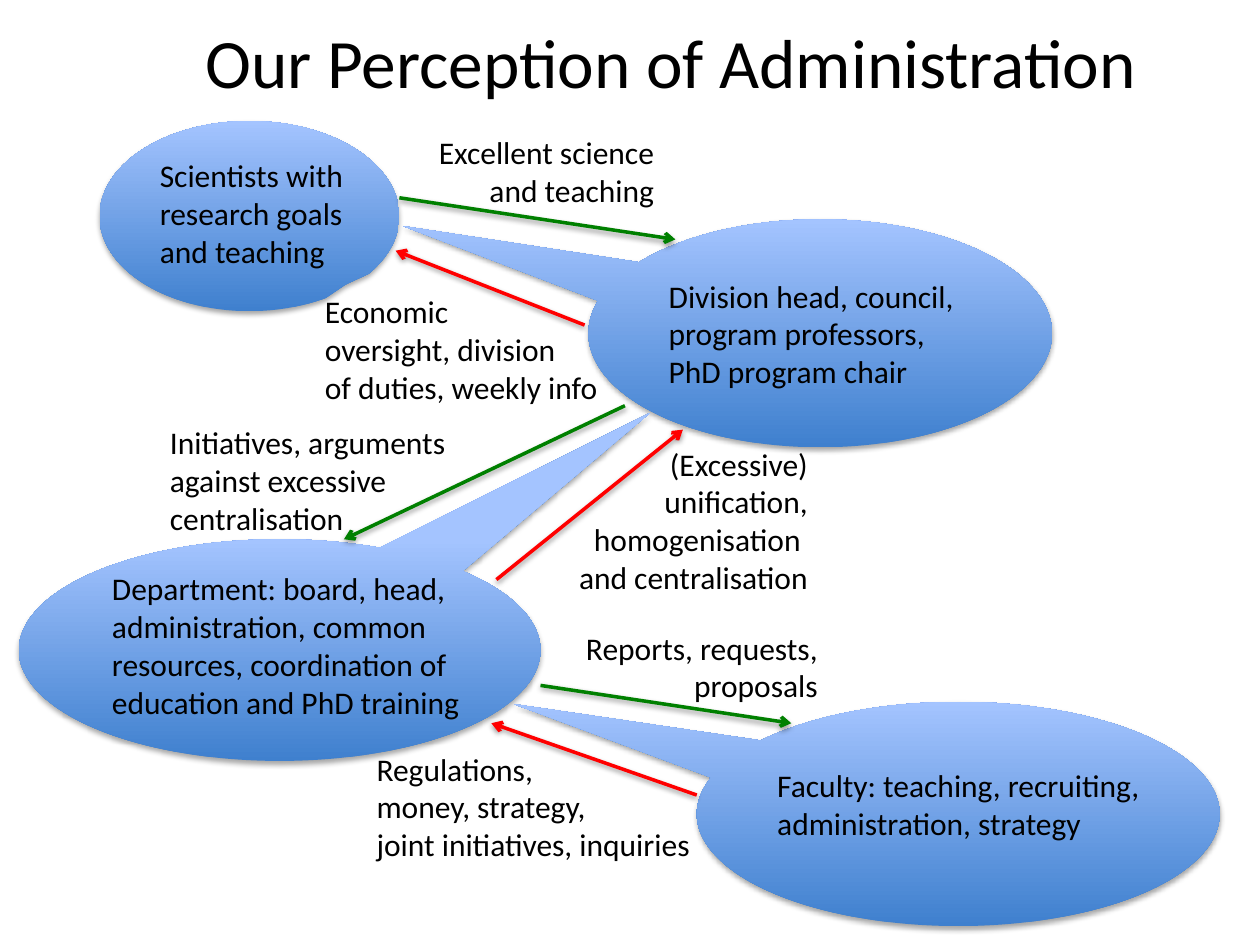
from dataclasses import dataclass

import lxml.etree
import pptx
import pptx.dml.color
import pptx.enum.dml
import pptx.enum.shapes
import pptx.enum.text
import pptx.oxml.ns
import pptx.presentation
import pptx.slide
import pptx.util

COLUMNS, ROWS = 100, 75
LEFT = pptx.enum.text.PP_ALIGN.LEFT
CENTER = pptx.enum.text.PP_ALIGN.CENTER
RIGHT = pptx.enum.text.PP_ALIGN.RIGHT


@dataclass(frozen=True)
class Theme:
    font: str = "Calibri"
    title_size: float = 39.6
    body_size: float = 18
    text: str = "000000"
    callout_bottom: str = "3F80CE"
    callout_top: str = "A4C4FF"
    upward: str = "008000"
    downward: str = "FF0000"
    arrow_width: float = 2
    shadow_blur: float = 3.1
    callout_shadow: tuple[float, int] = (1.8, 35)
    arrow_shadow: tuple[float, int] = (1.6, 38)


@dataclass(frozen=True)
class Box:
    column: float
    row: float
    columns: float
    rows: float


@dataclass(frozen=True)
class Callout:
    box: Box
    pointer: tuple[float, float]
    text: str = ""


@dataclass(frozen=True)
class Label:
    box: Box
    text: str
    align: pptx.enum.text.PP_ALIGN = LEFT
    wrap: bool = False


@dataclass(frozen=True)
class Arrow:
    start: tuple[float, float]
    end: tuple[float, float]
    color: str


THEME = Theme()

TITLE = Label(Box(12.6, 1, 81.3, 7.6), "Our Perception of Administration", CENTER, True)

CALLOUTS = [
    Callout(Box(7.9, 9.6, 23.8, 15.1), (0.32, 0.36)),
    Callout(Box(46.7, 17.4, 36.8, 18.1), (-0.9, -0.47),
            "Division head, council, program professors, PhD program chair"),
    Callout(Box(1.5, 42.8, 41.4, 17.6), (0.71, -1.07)),
    Callout(Box(55.3, 55.7, 41.5, 17.8), (-0.85, -0.49)),
]

ARROWS = [
    Arrow((31.7, 15.7), (53.6, 19), THEME.upward),
    Arrow((46.4, 25.8), (31.4, 19.9), THEME.downward),
    Arrow((49.6, 32.2), (27.3, 42.8), THEME.upward),
    Arrow((39.4, 46), (54.2, 34.1), THEME.downward),
    Arrow((42.9, 54.4), (62.8, 57.4), THEME.upward),
    Arrow((55.3, 63.1), (39, 57.4), THEME.downward),
]

LABELS = [
    Label(Box(11.7, 11.9, 16.7, 13.1), "Scientists with\nresearch goals\nand teaching"),
    Label(Box(7.9, 44.7, 31.1, 13.1),
          "Department: board, head, administration, common resources, "
          "coordination of education and PhD training", wrap=True),
    Label(Box(60.7, 60.3, 31.1, 10.1), "Faculty: teaching, recruiting,\nadministration, strategy"),
    Label(Box(32.4, 10.1, 20.5, 7.1), "Excellent science\vand teaching", RIGHT, True),
    Label(Box(24.8, 22.7, 28.8, 10.1),
          "Economic\voversight, division\vof duties, weekly info", wrap=True),
    Label(Box(12.5, 33.1, 24.2, 10.1),
          "Initiatives, arguments\vagainst excessive\vcentralisation"),
    Label(Box(44, 34.8, 21.1, 16.2),
          "(Excessive)\vunification,\vhomogenisation \nand centralisation", RIGHT),
    Label(Box(45.2, 49.4, 20.7, 7.1), "Reports, requests,\vproposals", RIGHT),
    Label(Box(28.9, 59, 27.8, 10.1),
          "Regulations,\vmoney, strategy,\vjoint initiatives, inquiries"),
]


def rgb(color: str) -> pptx.dml.color.RGBColor:
    return pptx.dml.color.RGBColor.from_string(color)


def across(columns: float) -> int:
    return pptx.util.Inches(10 * columns / COLUMNS)


def down(rows: float) -> int:
    return pptx.util.Inches(7.5 * rows / ROWS)


def place(box: Box) -> tuple[int, int, int, int]:
    return across(box.column), down(box.row), across(box.columns), down(box.rows)


def add_element(parent, tag: str, **attributes):
    return lxml.etree.SubElement(parent, pptx.oxml.ns.qn(tag), attributes)


def add_shadow(shape, distance: float, opacity: int) -> None:
    effects = add_element(shape._element.spPr, "a:effectLst")
    shadow = add_element(
        effects, "a:outerShdw", blurRad=str(pptx.util.Pt(THEME.shadow_blur)),
        dist=str(pptx.util.Pt(distance)), dir="5400000", rotWithShape="0")
    color = add_element(shadow, "a:srgbClr", val="000000")
    add_element(color, "a:alpha", val=str(opacity * 1000))


def write(frame, text: str, align: pptx.enum.text.PP_ALIGN, size: float) -> None:
    frame.text = text
    for paragraph in frame.paragraphs:
        paragraph.alignment = align
        paragraph.font.name = THEME.font
        paragraph.font.size = pptx.util.Pt(size)
        paragraph.font.color.rgb = rgb(THEME.text)


def draw_label(slide: pptx.slide.Slide, label: Label, size: float,
               anchor: pptx.enum.text.MSO_ANCHOR) -> None:
    frame = slide.shapes.add_textbox(*place(label.box)).text_frame
    frame.word_wrap = label.wrap
    frame.vertical_anchor = anchor
    write(frame, label.text, label.align, size)


def draw_callout(slide: pptx.slide.Slide, callout: Callout) -> None:
    shape = slide.shapes.add_shape(
        pptx.enum.shapes.MSO_SHAPE.OVAL_CALLOUT, *place(callout.box))
    shape.adjustments[0], shape.adjustments[1] = callout.pointer
    shape.fill.gradient()
    shape.fill.gradient_angle = 90
    colors = (THEME.callout_bottom, THEME.callout_top)
    for position, (stop, color) in enumerate(zip(shape.fill.gradient_stops, colors)):
        stop.position = position
        stop.color.rgb = rgb(color)
    shape.line.fill.background()
    add_shadow(shape, *THEME.callout_shadow)
    if callout.text:
        shape.text_frame.vertical_anchor = pptx.enum.text.MSO_ANCHOR.MIDDLE
        write(shape.text_frame, callout.text, LEFT, THEME.body_size)


def draw_arrow(slide: pptx.slide.Slide, arrow: Arrow) -> None:
    connector = slide.shapes.add_connector(
        pptx.enum.shapes.MSO_CONNECTOR.STRAIGHT,
        across(arrow.start[0]), down(arrow.start[1]),
        across(arrow.end[0]), down(arrow.end[1]))
    connector.line.color.rgb = rgb(arrow.color)
    connector.line.width = pptx.util.Pt(THEME.arrow_width)
    add_element(connector.line._get_or_add_ln(), "a:tailEnd", type="arrow")
    add_shadow(connector, *THEME.arrow_shadow)


def main() -> None:
    presentation = pptx.Presentation()
    presentation.slide_width = across(COLUMNS)
    presentation.slide_height = down(ROWS)
    slide = presentation.slides.add_slide(presentation.slide_layouts[6])
    draw_label(slide, TITLE, THEME.title_size, pptx.enum.text.MSO_ANCHOR.MIDDLE)
    for callout in CALLOUTS:
        draw_callout(slide, callout)
    for arrow in ARROWS:
        draw_arrow(slide, arrow)
    for label in LABELS:
        draw_label(slide, label, THEME.body_size, pptx.enum.text.MSO_ANCHOR.TOP)
    presentation.save("out.pptx")


if __name__ == "__main__":
    main()
